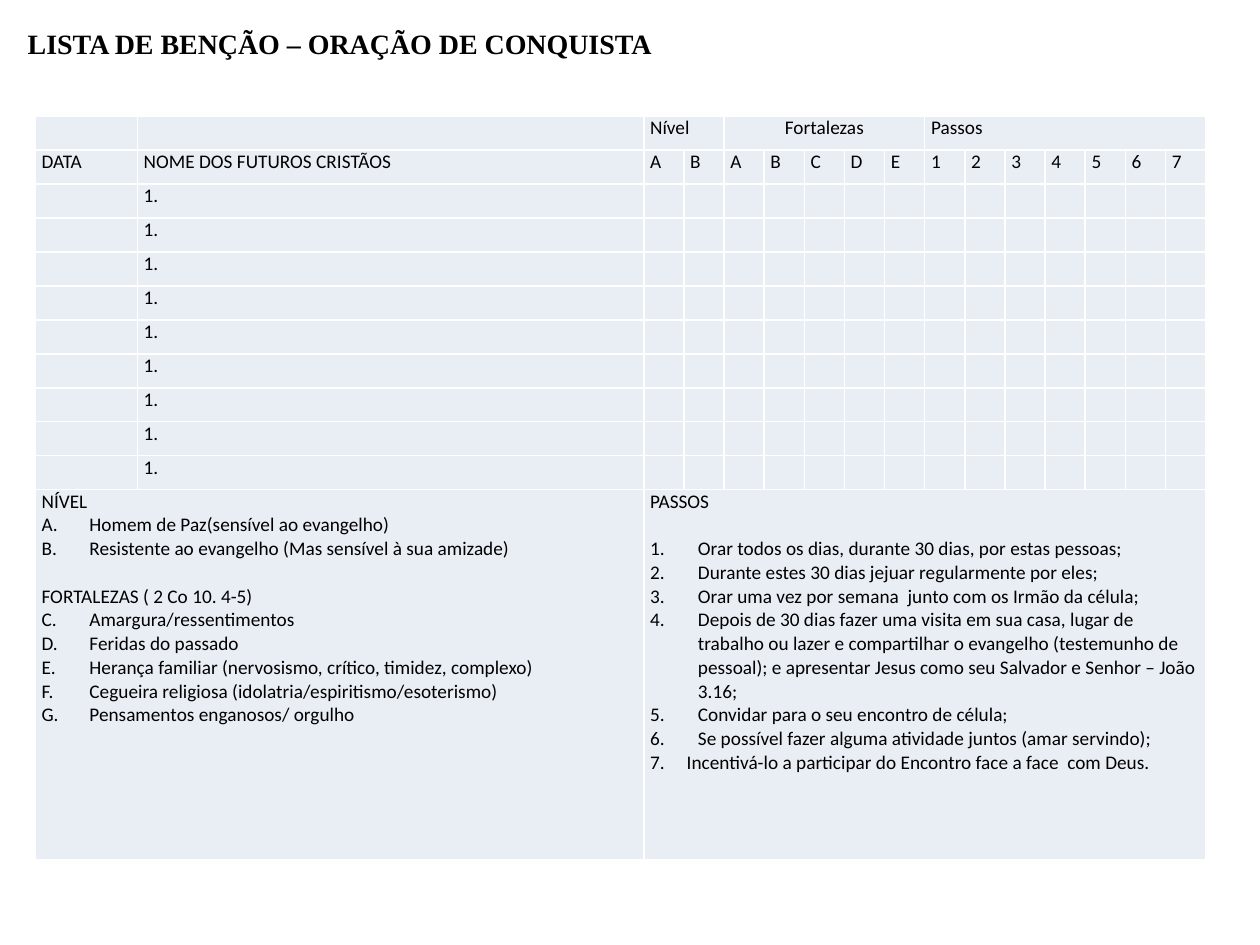
from lxml import etree
from pptx import Presentation
from pptx.dml.color import RGBColor
from pptx.enum import text
from pptx.oxml.ns import qn
from pptx.util import Inches, Pt

BLACK = RGBColor(0x00, 0x00, 0x00)
CELL_FILL = RGBColor(0xE9, 0xED, 0xF4)
BORDER = RGBColor(0xFF, 0xFF, 0xFF)

TABLE_WIDTH = 9.29
DATE_WIDTH, NAME_WIDTH, MARKS = 0.81, 4.02, 14
ROW_HEIGHT, LEGEND_HEIGHT, ENTRY_ROWS = 0.27, 2.94, 9
LEGEND_ROW = ENTRY_ROWS + 2
HANGING = 0.38

LEVELS = [
    "Homem de Paz(sensível ao evangelho)",
    "Resistente ao evangelho (Mas sensível à sua amizade)",
]
STRONGHOLDS = [
    "Amargura/ressentimentos",
    "Feridas do passado",
    "Herança familiar (nervosismo, crítico, timidez, complexo)",
    "Cegueira religiosa (idolatria/espiritismo/esoterismo)",
    "Pensamentos enganosos/ orgulho",
]
STEPS = [
    "Orar todos os dias, durante 30 dias, por estas pessoas;",
    "Durante estes 30 dias jejuar regularmente por eles;",
    "Orar uma vez por semana  junto com os Irmão da célula;",
    "Depois de 30 dias fazer uma visita em sua casa, lugar de trabalho ou lazer "
    "e compartilhar o evangelho (testemunho de pessoal); e apresentar Jesus "
    "como seu Salvador e Senhor – João 3.16;",
    "Convidar para o seu encontro de célula;",
    "Se possível fazer alguma atividade juntos (amar servindo);",
    "Incentivá-lo a participar do Encontro face a face  com Deus.",
]


def number(para, scheme, start=1, indent=HANGING):
    """Turn a paragraph into a hanging, automatically numbered item."""
    props = para._p.get_or_add_pPr()
    props.set("marL", str(Inches(indent)))
    props.set("indent", str(-Inches(indent)))
    etree.SubElement(props, qn("a:buFont"), typeface="+mj-lt")
    etree.SubElement(props, qn("a:buAutoNum"), type=scheme, startAt=str(start))


def add_list(cell, items, scheme, start=1):
    for item in items:
        para = cell.text_frame.add_paragraph()
        para.text = item
        number(para, scheme, start)


deck = Presentation()
deck.slide_width, deck.slide_height = Inches(10), Inches(7.5)
page = deck.slides.add_slide(deck.slide_layouts[5])

# Title
title = page.shapes.title
title.left, title.top = Inches(0.12), Inches(0.21)
title.width, title.height = Inches(9.88), Inches(0.5)
frame = title.text_frame
frame.text = "LISTA DE BENÇÃO – ORAÇÃO DE CONQUISTA"
frame.auto_size = text.MSO_AUTO_SIZE.NONE
frame.vertical_anchor = text.MSO_ANCHOR.TOP
frame.margin_left = frame.margin_right = Inches(0.1)
frame.margin_top = frame.margin_bottom = 0
frame.paragraphs[0].alignment = text.PP_ALIGN.LEFT
font = frame.paragraphs[0].runs[0].font
font.name, font.size, font.bold = "Times New Roman", Pt(16), True
font.color.rgb = BLACK

# Prayer table
table = page.shapes.add_table(
    LEGEND_ROW + 1, MARKS + 2, Inches(0.28), Inches(0.92), Inches(TABLE_WIDTH),
    Inches(LEGEND_ROW * ROW_HEIGHT + LEGEND_HEIGHT)).table
table.first_row = table.horz_banding = False
mark_width = (TABLE_WIDTH - DATE_WIDTH - NAME_WIDTH) / MARKS
for column, width in zip(table.columns, [DATE_WIDTH, NAME_WIDTH] + [mark_width] * MARKS):
    column.width = Inches(width)
for row in table.rows:
    row.height = Inches(ROW_HEIGHT)
table.rows[LEGEND_ROW].height = Inches(LEGEND_HEIGHT)

# Headings
for first, last, heading, alignment in [
        (2, 3, "Nível", text.PP_ALIGN.JUSTIFY),
        (4, 8, "Fortalezas", text.PP_ALIGN.CENTER),
        (9, 15, "Passos", text.PP_ALIGN.JUSTIFY)]:
    table.cell(0, first).merge(table.cell(0, last))
    table.cell(0, first).text_frame.text = heading
    table.cell(0, first).text_frame.paragraphs[0].alignment = alignment
for index, label in enumerate(["DATA", "NOME DOS FUTUROS CRISTÃOS", *"ABABCDE1234567"]):
    table.cell(1, index).text_frame.text = label

# Numbered entry lines, each holding a no-break space so its number shows
for index in range(2, LEGEND_ROW):
    entry = table.cell(index, 1).text_frame
    entry.text = " "
    number(entry.paragraphs[0], "arabicPeriod")

# Legends
levels = table.cell(LEGEND_ROW, 0)
levels.merge(table.cell(LEGEND_ROW, 1))
levels.text_frame.text = "NÍVEL"
add_list(levels, LEVELS, "alphaUcPeriod")
subheading = levels.text_frame.add_paragraph()
subheading.text = "FORTALEZAS ( 2 Co 10. 4-5)"
subheading.space_before = Pt(13.5)
add_list(levels, STRONGHOLDS, "alphaUcPeriod", len(LEVELS) + 1)

steps = table.cell(LEGEND_ROW, 2)
steps.merge(table.cell(LEGEND_ROW, MARKS + 1))
steps.text_frame.text = "PASSOS"
steps.text_frame.paragraphs[0].space_after = Pt(13.5)
add_list(steps, STEPS, "arabicPeriod")
last_step = steps.text_frame.paragraphs[-1]._p.pPr
last_step.set("marL", str(Inches(0.29)))
last_step.set("indent", str(-Inches(0.29)))

# Cell format
for cell in table.iter_cells():
    cell.margin_left = cell.margin_right = Inches(0.05)
    cell.margin_top = cell.margin_bottom = 0
    for side in ("lnL", "lnR", "lnT", "lnB"):
        line = etree.SubElement(cell._tc.get_or_add_tcPr(), qn(f"a:{side}"), w=str(Pt(1)))
        paint = etree.SubElement(line, qn("a:solidFill"))
        etree.SubElement(paint, qn("a:srgbClr"), val=str(BORDER))
    cell.fill.solid()
    cell.fill.fore_color.rgb = CELL_FILL
    for para in cell.text_frame.paragraphs:
        for span in para.runs:
            span.font.name, span.font.size = "Calibri", Pt(11)
            span.font.color.rgb = BLACK
        if not para.runs:
            etree.SubElement(para._p, qn("a:endParaRPr"), sz="1100")

deck.save("out.pptx")
